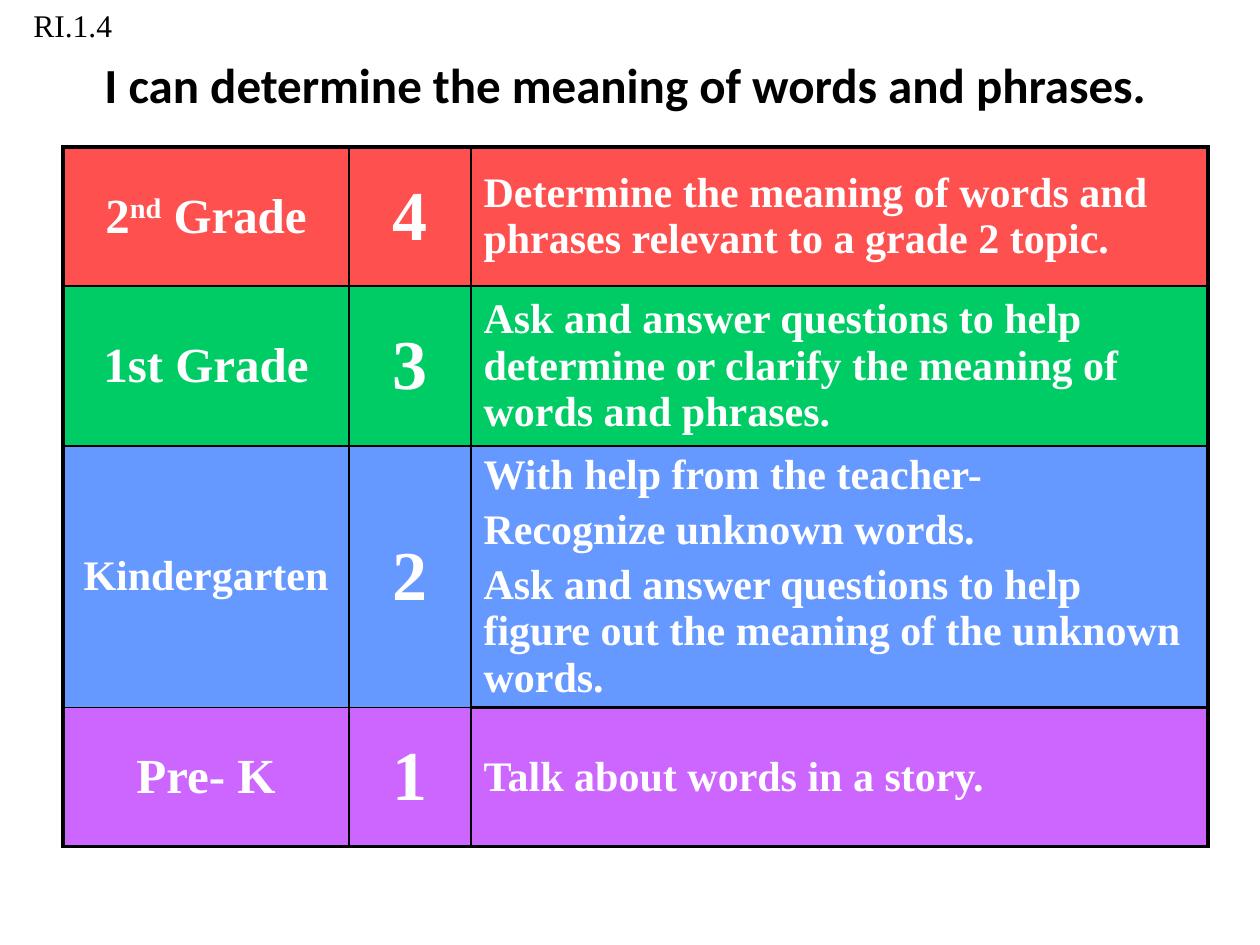
"""Build the RI.1.4 learning scale slide."""
from dataclasses import dataclass

import pptx
import pptx.dml.color
import pptx.enum.text
import pptx.oxml.ns
import pptx.util
from lxml import etree

ALIGN = pptx.enum.text.PP_ALIGN
ANCHOR = pptx.enum.text.MSO_ANCHOR
EMU_PER_PX = 914400 / 126


@dataclass(frozen=True)
class Theme:
    ink: str = "000000"
    light: str = "FFFFFF"
    heading_font: str = "Calibri"
    body_font: str = "Times New Roman"
    label_size: int = 18
    body_size: int = 24
    heading_size: int = 28
    score_size: int = 40
    thin: float = 1
    medium: float = 1.5
    thick: float = 2.25


THEME = Theme()


@dataclass(frozen=True)
class Span:
    text: str
    baseline: int = 0


@dataclass(frozen=True)
class Level:
    grade: tuple[Span, ...]
    score: str
    goals: tuple[str, ...]
    fill: str
    height: int
    above: tuple[float, float, float]
    below: tuple[float, float, float]
    inner: float = THEME.thin
    grade_size: int = THEME.heading_size


THIN_ROW = (THEME.thin,) * 3
MEDIUM_ROW = (THEME.medium,) * 3
THICK_ROW = (THEME.thick,) * 3
MIXED_ROW = (THEME.thin, THEME.thin, THEME.medium)

LEVELS = (
    Level((Span("2"), Span("nd", 30), Span(" Grade")), "4",
          ("Determine the meaning of words and phrases relevant to a grade 2 topic.",),
          "FF5050", 139, THICK_ROW, MEDIUM_ROW),
    Level((Span("1st Grade"),), "3",
          ("Ask and answer questions to help determine or clarify the meaning of words and phrases.",),
          "00CC66", 160, MEDIUM_ROW, MIXED_ROW),
    Level((Span("Kindergarten"),), "2",
          ("With help from the teacher-", "Recognize unknown words.",
           "Ask and answer questions to help figure out the meaning of the unknown words."),
          "6699FF", 261, MIXED_ROW, MIXED_ROW, THEME.medium, THEME.body_size),
    Level((Span("Pre- K"),), "1", ("Talk about words in a story.",),
          "CC66FF", 139, MIXED_ROW, MEDIUM_ROW),
)
COLUMN_WIDTHS = (286, 122, 737)


def px(length: int) -> pptx.util.Emu:
    """Turn pixels into EMU."""
    return pptx.util.Emu(round(length * EMU_PER_PX))


def set_all(target: object, values: dict) -> None:
    """Set every attribute named in a dict."""
    for name, value in values.items():
        setattr(target, name, value)


def place(box, left: int, top: int, width: int, height: int) -> None:
    """Move and size a box given in pixels."""
    set_all(box, {"left": px(left), "top": px(top), "width": px(width), "height": px(height)})


def write(para, spans: tuple[Span, ...], size: int, font: str, color: str,
          bold: bool, align=ALIGN.LEFT) -> None:
    """Fill a paragraph with formatted spans."""
    para.alignment = align
    for span in spans:
        run = para.add_run()
        run.text = span.text
        set_all(run.font, {"size": pptx.util.Pt(size), "name": font, "bold": bold})
        run.font.color.rgb = pptx.dml.color.RGBColor.from_string(color)
        if span.baseline:
            run.font._element.set("baseline", str(span.baseline * 1000))


def space_before(para, percent: int) -> None:
    """Give a paragraph space above as a share of its line."""
    spacing = etree.SubElement(para._p.get_or_add_pPr(), pptx.oxml.ns.qn("a:spcBef"))
    etree.SubElement(spacing, pptx.oxml.ns.qn("a:spcPct"), val=str(percent * 1000))


def draw_borders(cell, weights: dict[str, float]) -> None:
    """Draw the four edges of a cell ahead of its fill."""
    properties = cell._tc.get_or_add_tcPr()
    for index, (edge, weight) in enumerate(weights.items()):
        line = etree.Element(pptx.oxml.ns.qn(f"a:ln{edge}"), w=str(pptx.util.Pt(weight)))
        fill = etree.SubElement(line, pptx.oxml.ns.qn("a:solidFill"))
        etree.SubElement(fill, pptx.oxml.ns.qn("a:srgbClr"), val=THEME.ink)
        properties.insert(index, line)


def fill_cell(cell, paragraphs: tuple[tuple[Span, ...], ...], size: int, align, color: str) -> None:
    """Write and colour one table cell."""
    cell.vertical_anchor = ANCHOR.MIDDLE
    cell.fill.solid()
    cell.fill.fore_color.rgb = pptx.dml.color.RGBColor.from_string(color)
    frame = cell.text_frame
    for index, spans in enumerate(paragraphs):
        para = frame.add_paragraph() if index else frame.paragraphs[0]
        write(para, spans, size, THEME.body_font, THEME.light, True, align)
        space_before(para, 20)


def draw_scale(page) -> None:
    """Draw the table of levels."""
    frame = page.shapes.add_table(
        len(LEVELS), len(COLUMN_WIDTHS), px(63), px(147),
        px(sum(COLUMN_WIDTHS)), px(sum(level.height for level in LEVELS)))
    table = frame.table
    set_all(table, {"first_row": False, "horz_banding": False})
    for column, width in zip(table.columns, COLUMN_WIDTHS):
        column.width = px(width)
    for row, level in zip(table.rows, LEVELS):
        row.height = px(level.height)
        contents = (
            ((level.grade,), level.grade_size, ALIGN.CENTER),
            (((Span(level.score),),), THEME.score_size, ALIGN.CENTER),
            (tuple((Span(goal),) for goal in level.goals), THEME.body_size, ALIGN.LEFT),
        )
        sides = (THEME.thick, level.inner, level.inner, THEME.thick)
        for index, (cell, content) in enumerate(zip(row.cells, contents)):
            fill_cell(cell, *content, level.fill)
            draw_borders(cell, {"L": sides[index], "R": sides[index + 1],
                                "T": level.above[index], "B": level.below[index]})


def main() -> None:
    """Build and save the deck."""
    deck = pptx.Presentation()
    set_all(deck, {"slide_width": px(1260), "slide_height": px(945)})
    page = deck.slides.add_slide(deck.slide_layouts[5])

    title = page.shapes.title
    place(title, 42, 21, 1166, 126)
    title.text_frame.vertical_anchor = ANCHOR.MIDDLE
    write(title.text_frame.paragraphs[0],
          (Span("I can determine the meaning of words and phrases."),),
          THEME.heading_size, THEME.heading_font, THEME.ink, True, ALIGN.CENTER)

    draw_scale(page)

    label = page.shapes.add_textbox(px(21), px(0), px(179), px(50))
    set_all(label.text_frame, {"word_wrap": True,
                               "auto_size": pptx.enum.text.MSO_AUTO_SIZE.SHAPE_TO_FIT_TEXT})
    write(label.text_frame.paragraphs[0], (Span("RI.1.4"),),
          THEME.label_size, THEME.body_font, THEME.ink, False)

    deck.save("out.pptx")


if __name__ == "__main__":
    main()
